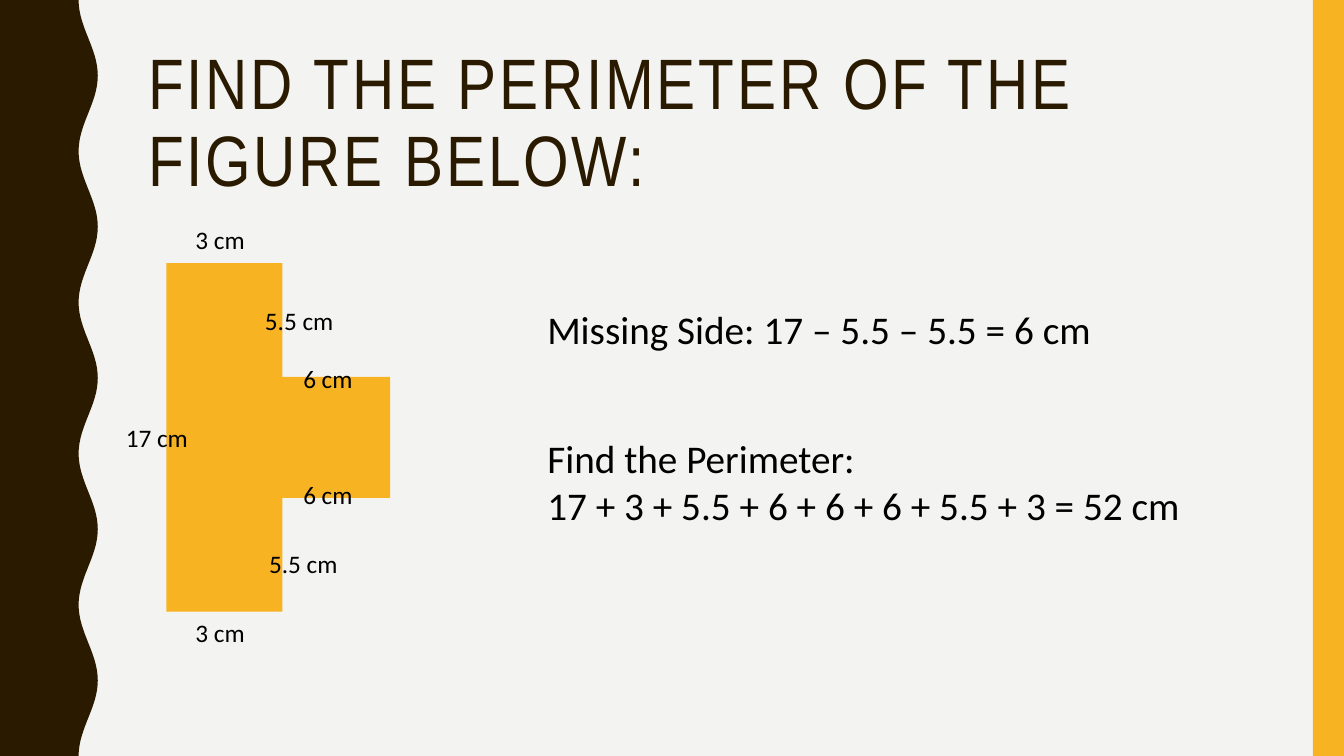
from math import cos, pi
from pptx import Presentation
from pptx.dml.color import RGBColor
from pptx.enum.shapes import MSO_SHAPE
from pptx.enum.text import MSO_ANCHOR, MSO_AUTO_SIZE
from pptx.util import Inches, Pt

PAPER = RGBColor(0xF3, 0xF3, 0xF2)
BROWN = RGBColor(0x2A, 0x1A, 0x00)
GOLD = RGBColor(0xF8, 0xB3, 0x23)
BLACK = RGBColor(0x00, 0x00, 0x00)
CELL = Inches(0.1)
COLS, ROWS = 133.3, 75


class Deck:
    """Draws one slide on a grid of tenth-inch cells."""

    def __init__(self):
        self.show = Presentation()
        self.show.slide_width = Inches(13.33)
        self.show.slide_height = Inches(7.5)
        self.slide = self.show.slides.add_slide(self.show.slide_layouts[6])
        self.paint(self.slide.background, PAPER)

    def span(self, *cells):
        return [round(cell * CELL) for cell in cells]

    def paint(self, item, color):
        item.fill.solid()
        item.fill.fore_color.rgb = color

    def plain(self, shape, color):
        self.paint(shape, color)
        shape.line.fill.background()
        shape.shadow.inherit = False

    def block(self, *box):
        shape = self.slide.shapes.add_shape(MSO_SHAPE.RECTANGLE, *self.span(*box))
        self.plain(shape, GOLD)

    def wave(self, mid, swing, turn, step):
        count = round(ROWS / step)
        edge = [(mid - swing * cos(2 * pi * i * step / turn), i * step)
                for i in range(count + 1)]
        pen = self.slide.shapes.build_freeform(0, 0, scale=CELL / 1000)
        points = [(x * 1000, y * 1000) for x, y in edge + [(0, ROWS)]]
        pen.add_line_segments(points, close=True)
        self.plain(pen.convert_to_shape(), BROWN)

    def text(self, box, lines, size, face="Calibri", color=BLACK, gap=None,
             track=None, **frame):
        body = self.slide.shapes.add_textbox(*self.span(*box)).text_frame
        body.text = "\n".join(lines)
        for name, value in {"word_wrap": True, **frame}.items():
            setattr(body, name, value)
        for para in body.paragraphs:
            para.line_spacing = gap
            font = para.runs[0].font
            for name, value in {"name": face, "size": Pt(size)}.items():
                setattr(font, name, value)
            font.color.rgb = color
            if track:
                para.runs[0].font._element.set("spc", str(track * 100))

    def label(self, left, top, words, wide):
        self.text((left, top, wide, 4), [words], 18, word_wrap=False,
                  auto_size=MSO_AUTO_SIZE.SHAPE_TO_FIT_TEXT)


def main():
    deck = Deck()
    deck.wave(mid=8.75, swing=0.95, turn=15, step=0.5)
    deck.block(COLS - 3.1, 0, 3.1, ROWS)
    deck.text((13.7, 4.2, 111.3, 16.3),
              ["FIND THE PERIMETER OF THE FIGURE BELOW:"], 51, "Arial Narrow",
              BROWN, gap=0.9, track=2, vertical_anchor=MSO_ANCHOR.MIDDLE)
    deck.block(16.5, 26.1, 11.5, 34.6)
    deck.block(27.2, 37.4, 11.5, 12)
    for left, top, words, wide in [
        (18.4, 60.8, "3 cm", 7.7),
        (25.7, 53.9, "5.5 cm", 9.6),
        (25.3, 29.8, "5.5 cm", 9.6),
        (11.5, 41.4, "17 cm", 8.3),
        (18.4, 21.8, "3 cm", 7.7),
        (29.1, 35.6, "6 cm", 7.7),
        (29.1, 47.1, "6 cm", 7.7),
    ]:
        deck.label(left, top, words, wide)
    deck.text((53.3, 29.8, 70.7, 15.1), ["Missing Side: 17 – 5.5 – 5.5 = 6 cm"], 28)
    deck.text((53.3, 42.6, 70.7, 10.4),
              ["Find the Perimeter:", "17 + 3 + 5.5 + 6 + 6 + 6 + 5.5 + 3 = 52 cm"], 28)
    deck.show.save("out.pptx")


if __name__ == "__main__":
    main()
